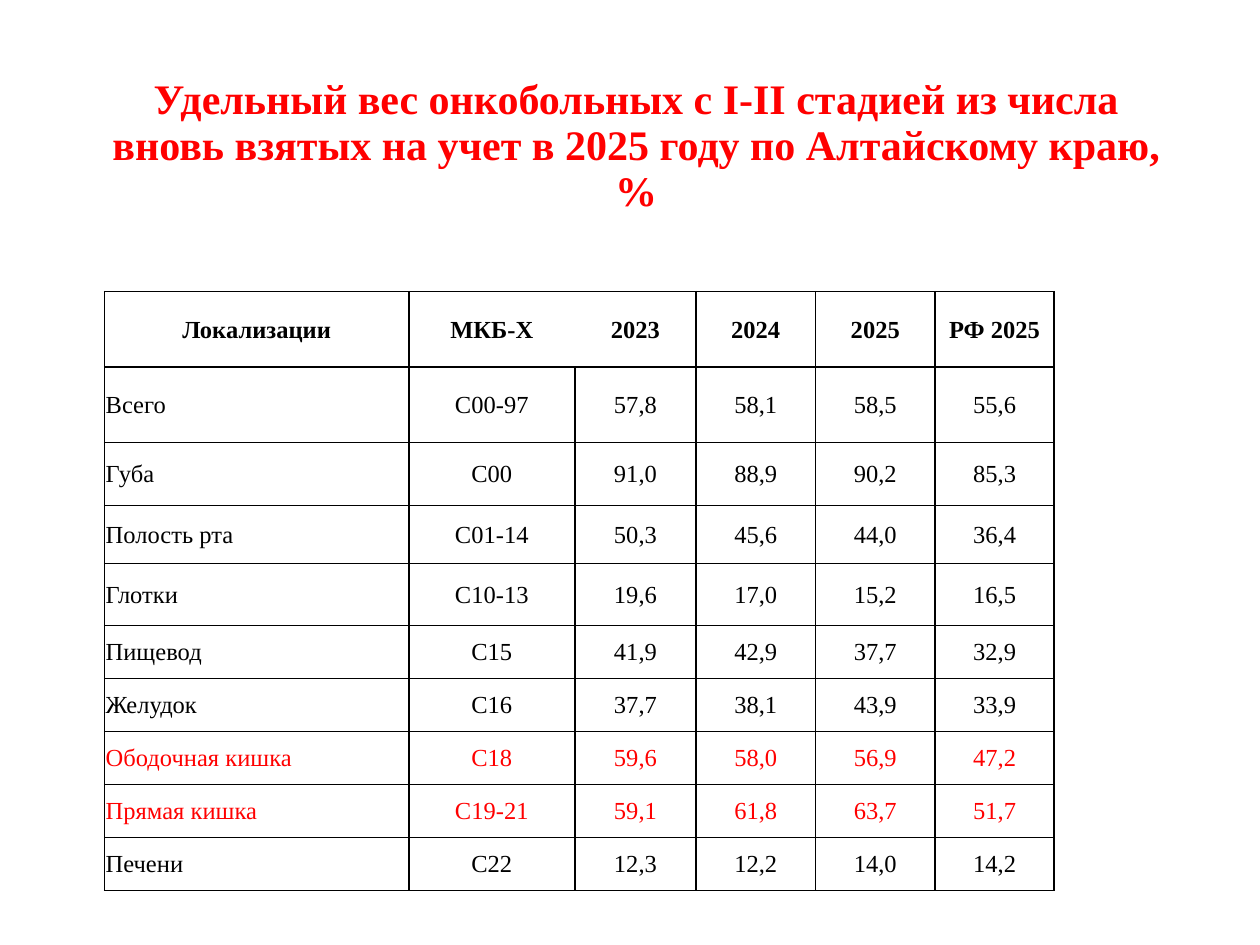
from lxml import etree
from pptx import Presentation
from pptx import util as u
from pptx.dml.color import RGBColor
from pptx.enum import text
from pptx.oxml import ns

BLACK, RED, WHITE = "000000", "FF0000", "FFFFFF"
FONT = "Times New Roman"
TITLE = ("Удельный вес онкобольных с I-II стадией из числа вновь взятых "
         "на учет в 2025 году по Алтайскому краю, %")
HEADER = ["Локализации", "МКБ-X", "2023", "2024", "2025", "РФ 2025"]
BODY = [
    ["Всего", "С00-97", "57,8", "58,1", "58,5", "55,6"],
    ["Губа", "С00", "91,0", "88,9", "90,2", "85,3"],
    ["Полость рта", "С01-14", "50,3", "45,6", "44,0", "36,4"],
    ["Глотки", "С10-13", "19,6", "17,0", "15,2", "16,5"],
    ["Пищевод", "С15", "41,9", "42,9", "37,7", "32,9"],
    ["Желудок", "С16", "37,7", "38,1", "43,9", "33,9"],
    ["Ободочная кишка", "С18", "59,6", "58,0", "56,9", "47,2"],
    ["Прямая кишка", "С19-21", "59,1", "61,8", "63,7", "51,7"],
    ["Печени", "С22", "12,3", "12,2", "14,0", "14,2"],
]
RED_ROWS = {"Ободочная кишка", "Прямая кишка"}
WHITE_ROW = "Желудок"
COLUMN_WIDTHS = [2.29, 2.29, 1.55, 3.35, 2.44, 2.41, 2.41, 2.4, 2.29]
ROW_HEIGHTS = [2.84] + [1.52] * 3 + [1.27, 1.17, 1.24] + [1.07] * 5
HEADER_ROW = 2
LAST_COLUMN = len(COLUMN_WIDTHS) - 1


def color(value):
    return RGBColor.from_string(value)


def add_table(slide):
    frame = slide.shapes.add_table(
        len(ROW_HEIGHTS), len(COLUMN_WIDTHS), u.Cm(2.11), u.Cm(1.52),
        u.Cm(sum(COLUMN_WIDTHS)), u.Cm(sum(ROW_HEIGHTS)))
    table = frame.table
    table.first_row = table.horz_banding = False
    for column, width in zip(table.columns, COLUMN_WIDTHS):
        column.width = u.Cm(width)
    for row, height in zip(table.rows, ROW_HEIGHTS):
        row.height = u.Cm(height)
    return table


def set_borders(cell, edges):
    properties = cell._tc.get_or_add_tcPr()
    for side in "LRTB":
        line = etree.SubElement(properties, ns.qn(f"a:ln{side}"))
        if side in edges:
            line.set("w", str(u.Pt(edges[side])))
            fill = etree.SubElement(line, ns.qn("a:solidFill"))
            etree.SubElement(fill, ns.qn("a:srgbClr")).set("val", BLACK)
        else:
            etree.SubElement(line, ns.qn("a:noFill"))


def find_edges(row, column):
    if row == 0:
        return {}
    if column == LAST_COLUMN:
        return {"L": 1} if row >= HEADER_ROW else {}
    if row < HEADER_ROW:
        return {"B": 1}
    edges = {"L": 1, "R": 1,
             "T": 1 if row <= HEADER_ROW + 1 else 0.5,
             "B": 1 if row == HEADER_ROW else 0.5}
    if column in (1, 2) or (row, column) == (HEADER_ROW, 4):
        del edges["L"]
    if column == 1 or (row, column) == (HEADER_ROW, 3):
        del edges["R"]
    return edges


def format_cells(table):
    for row in range(len(ROW_HEIGHTS)):
        for column in range(len(COLUMN_WIDTHS)):
            cell = table.cell(row, column)
            cell.margin_left = cell.margin_right = cell.margin_top = u.Cm(0.02)
            cell.margin_bottom = 0
            cell.vertical_anchor = text.MSO_ANCHOR.MIDDLE
            set_borders(cell, find_edges(row, column))
            cell.fill.background()


def write_cell(cell, content, size=14, bold=False, ink=BLACK, centered=True):
    paragraph = cell.text_frame.paragraphs[0]
    paragraph.alignment = text.PP_ALIGN.CENTER if centered else text.PP_ALIGN.LEFT
    run = paragraph.add_run()
    run.text = content
    run.font.name = FONT
    run.font.size = u.Pt(size)
    run.font.bold = bold
    run.font.color.rgb = color(ink)


def write_title(table):
    table.cell(0, 0).merge(table.cell(0, LAST_COLUMN))
    write_cell(table.cell(0, 0), TITLE, size=24, bold=True, ink=RED)


def write_rows(table):
    for row, values in enumerate([HEADER] + BODY, HEADER_ROW):
        is_header = row == HEADER_ROW
        ink = RED if values[0] in RED_ROWS else BLACK
        table.cell(row, 0).merge(table.cell(row, 2))
        for column, value in zip([0, 3, 4, 5, 6, 7], values):
            cell = table.cell(row, column)
            write_cell(cell, value, bold=is_header, ink=ink,
                       centered=is_header or column > 0)
            if values[0] == WHITE_ROW and column in (4, 5, 6):
                cell.fill.solid()
                cell.fill.fore_color.rgb = color(WHITE)


def main():
    presentation = Presentation()
    presentation.slide_width = u.Cm(25.4)
    presentation.slide_height = u.Cm(19.05)
    slide = presentation.slides.add_slide(presentation.slide_layouts[6])
    table = add_table(slide)
    format_cells(table)
    write_title(table)
    write_rows(table)
    presentation.save("out.pptx")


if __name__ == "__main__":
    main()
